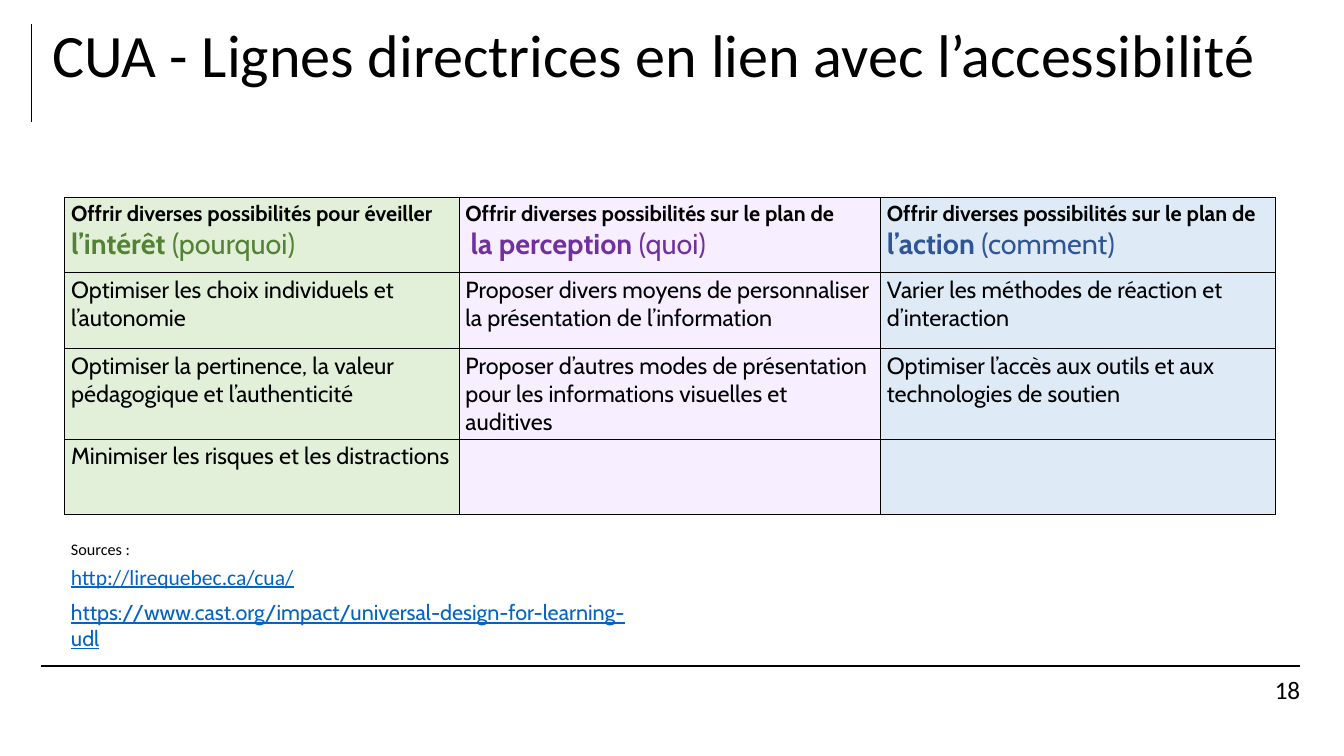
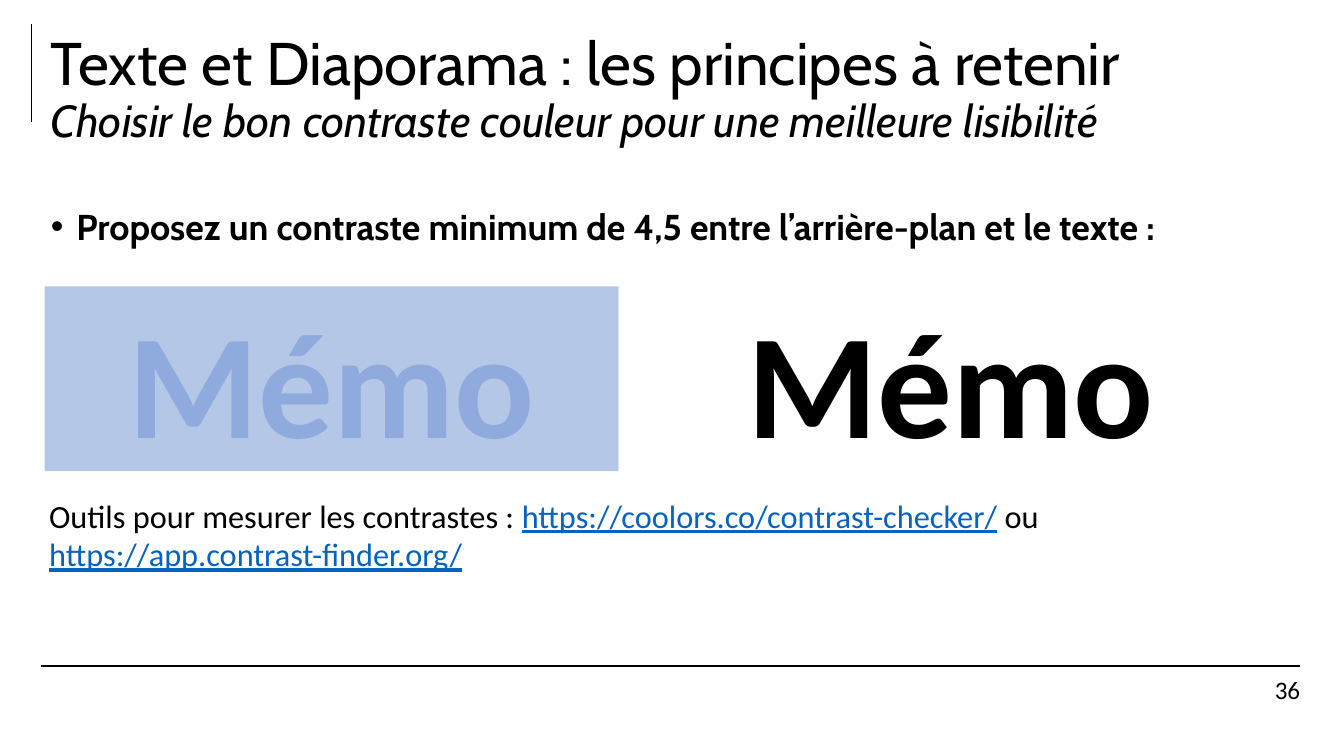
from dataclasses import dataclass

from lxml import etree
from pptx import Presentation
from pptx.dml.color import RGBColor
from pptx.enum.shapes import MSO_CONNECTOR, MSO_SHAPE
from pptx.enum.text import MSO_ANCHOR, PP_ALIGN
from pptx.oxml.ns import qn
from pptx.slide import Slide
from pptx.table import _Cell
from pptx.text.text import TextFrame, _Paragraph
from pptx.util import Cm, Pt

STRAIGHT = MSO_CONNECTOR.STRAIGHT
RECTANGLE = MSO_SHAPE.RECTANGLE
TOP, MIDDLE = MSO_ANCHOR.TOP, MSO_ANCHOR.MIDDLE
CENTER, RIGHT = PP_ALIGN.CENTER, PP_ALIGN.RIGHT

BLACK = RGBColor(0x00, 0x00, 0x00)
WHITE = RGBColor(0xFF, 0xFF, 0xFF)
LINK_BLUE = RGBColor(0x05, 0x63, 0xC1)
GREEN, PALE_GREEN = RGBColor(0x54, 0x82, 0x35), RGBColor(0xE2, 0xF0, 0xD9)
PURPLE, PALE_PURPLE = RGBColor(0x70, 0x30, 0xA0), RGBColor(0xF7, 0xEF, 0xFF)
BLUE, PALE_BLUE = RGBColor(0x2F, 0x55, 0x97), RGBColor(0xDE, 0xEB, 0xF7)
MEMO_BLUE, MEMO_BACK = RGBColor(0x8F, 0xAA, 0xDC), RGBColor(0xB4, 0xC7, 0xE7)

CABIN = "Cabin"
CALIBRI = "Calibri"
TITLE_SIZE = 67


@dataclass(frozen=True)
class Span:
    """A piece of text with one format."""
    text: str
    size: float
    font: str = CALIBRI
    color: RGBColor = BLACK
    bold: bool = False
    italic: bool = False
    underline: bool = False


@dataclass(frozen=True)
class Box:
    """A place on the slide, in centimetres."""
    left: float
    top: float
    width: float
    height: float

    def lengths(self) -> tuple[Cm, Cm, Cm, Cm]:
        return Cm(self.left), Cm(self.top), Cm(self.width), Cm(self.height)


@dataclass(frozen=True)
class Principle:
    """A table column: its heading and its guidelines."""
    width: float
    intro: str
    goal: str
    question: str
    color: RGBColor
    fill: RGBColor
    guidelines: tuple[str, ...]
    goal_indent: float = 0


@dataclass(frozen=True)
class Memo:
    """A sample of text colour on a background."""
    box: Box
    color: RGBColor
    fill: RGBColor


PRINCIPLES = (
    Principle(15.49, "Offrir diverses possibilités pour éveiller", "l’intérêt ",
              "(pourquoi)", GREEN, PALE_GREEN,
              ("Optimiser les choix individuels et l’autonomie",
               "Optimiser la pertinence, la valeur pédagogique et l’authenticité",
               "Minimiser les risques et les distractions")),
    Principle(16.56, "Offrir diverses possibilités sur le plan de", "la perception ",
              "(quoi)", PURPLE, PALE_PURPLE,
              ("Proposer divers moyens de personnaliser la présentation de l’information",
               "Proposer d’autres modes de présentation pour les informations "
               "visuelles et auditives"),
              goal_indent=0.2),
    Principle(15.52, "Offrir diverses possibilités sur le plan de", "l’action ",
              "(comment)", BLUE, PALE_BLUE,
              ("Varier les méthodes de réaction et d’interaction",
               "Optimiser l’accès aux outils et aux technologies de soutien")),
)
TABLE_LEFT, TABLE_TOP, ROW_HEIGHT = 2.54, 7.75, 2.97

SOURCES = (
    (Box(TABLE_LEFT, 21.08, 5.1, 1.02), Span("Sources\u00a0:", 18)),
    (Box(TABLE_LEFT, 22.02, 11.81, 1.27),
     Span("http://lirequebec.ca/cua/", 24, color=LINK_BLUE, underline=True)),
    (Box(TABLE_LEFT, 23.42, 22.78, 1.27),
     Span("https://www.cast.org/impact/universal-design-for-learning-udl", 24,
          CABIN, LINK_BLUE, underline=True)),
)

MEMOS = (
    Memo(Box(1.75, 11.25, 22.56, 7.26), MEMO_BLUE, MEMO_BACK),
    Memo(Box(24.31, 11.25, 26.09, 7.26), BLACK, WHITE),
)


def write_spans(paragraph: _Paragraph, *spans: Span) -> None:
    for span in spans:
        run = paragraph.add_run()
        run.text = span.text
        font = run.font
        font.name, font.size = span.font, Pt(span.size)
        font.color.rgb = span.color
        font.bold, font.italic = span.bold, span.italic
        font.underline = span.underline


def add_text(slide: Slide, box: Box, *spans: Span) -> TextFrame:
    frame = slide.shapes.add_textbox(*box.lengths()).text_frame
    frame.word_wrap = True
    write_spans(frame.paragraphs[0], *spans)
    return frame


def add_rule(slide: Slide, x1: float, y1: float, x2: float, y2: float) -> None:
    rule = slide.shapes.add_connector(STRAIGHT, Cm(x1), Cm(y1), Cm(x2), Cm(y2))
    rule.line.color.rgb = BLACK
    rule.line.width = Pt(2)
    etree.SubElement(rule._element.spPr, qn("a:effectLst"))


def add_framed_slide(prs: Presentation, number: int, title_box: Box,
                     *title_lines: Span) -> Slide:
    """Adds a slide with the rules, title and page number that all slides share."""
    slide = prs.slides.add_slide(prs.slide_layouts[6])
    add_rule(slide, 1.63, 26.16, 51.08, 26.16)
    add_rule(slide, 1.24, 4.8, 1.24, 0.94)

    page = add_text(slide, Box(45.26, 26.49, 5.82, 1.19), Span(str(number), 28))
    page.margin_left = page.margin_right = page.margin_top = page.margin_bottom = 0
    page.vertical_anchor = MIDDLE
    page.paragraphs[0].alignment = RIGHT

    title = add_text(slide, title_box, title_lines[0])
    title.vertical_anchor = MIDDLE
    for line in title_lines[1:]:
        write_spans(title.add_paragraph(), line)
    for paragraph in title.paragraphs:
        paragraph.line_spacing = 0.9
    return slide


def style_cell(cell: _Cell, fill: RGBColor) -> None:
    """Gives a cell its black borders and its fill."""
    properties = cell._tc.get_or_add_tcPr()
    for side in ("a:lnL", "a:lnR", "a:lnT", "a:lnB"):
        border = etree.SubElement(properties, qn(side), w=str(Pt(1)))
        solid = etree.SubElement(border, qn("a:solidFill"))
        etree.SubElement(solid, qn("a:srgbClr"), val=str(BLACK))
    cell.fill.solid()
    cell.fill.fore_color.rgb = fill


def write_heading(cell: _Cell, principle: Principle) -> None:
    frame = cell.text_frame
    write_spans(frame.paragraphs[0], Span(principle.intro, 24, CABIN, bold=True))
    goal = frame.add_paragraph()
    goal._p.get_or_add_pPr().set("marL", str(Cm(principle.goal_indent)))
    write_spans(goal,
                Span(principle.goal, 32, CABIN, principle.color, bold=True),
                Span(principle.question, 32, CABIN, principle.color))


def add_principles_table(slide: Slide) -> None:
    row_count = 1 + max(len(principle.guidelines) for principle in PRINCIPLES)
    box = Box(TABLE_LEFT, TABLE_TOP, sum(principle.width for principle in PRINCIPLES),
              row_count * ROW_HEIGHT)
    table = slide.shapes.add_table(row_count, len(PRINCIPLES), *box.lengths()).table
    for row in table.rows:
        row.height = Cm(ROW_HEIGHT)
    for col, principle in enumerate(PRINCIPLES):
        table.columns[col].width = Cm(principle.width)
        for row in range(row_count):
            style_cell(table.cell(row, col), principle.fill)
        write_heading(table.cell(0, col), principle)
        for row, guideline in enumerate(principle.guidelines, start=1):
            write_spans(table.cell(row, col).text_frame.paragraphs[0],
                        Span(guideline, 26, CABIN))


def add_memo(slide: Slide, memo: Memo) -> None:
    panel = slide.shapes.add_shape(RECTANGLE, *memo.box.lengths())
    panel.shadow.inherit = False
    panel.fill.solid()
    panel.fill.fore_color.rgb = memo.fill
    panel.line.fill.background()
    frame = panel.text_frame
    frame.word_wrap = True
    frame.vertical_anchor = TOP
    frame.paragraphs[0].alignment = CENTER
    write_spans(frame.paragraphs[0], Span("Mémo", 166, color=memo.color, bold=True))


def add_bullet(paragraph: _Paragraph) -> None:
    properties = paragraph._p.get_or_add_pPr()
    properties.set("marL", str(Cm(1)))
    properties.set("indent", str(-Cm(1)))
    etree.SubElement(properties, qn("a:buFont"), typeface="Arial")
    etree.SubElement(properties, qn("a:buChar"), char="•")


def build_guidelines_slide(prs: Presentation) -> None:
    slide = add_framed_slide(
        prs, 18, Box(1.8, 0.2, 49.63, 4.14),
        Span("CUA - Lignes directrices en lien avec l’accessibilité", TITLE_SIZE))
    add_principles_table(slide)
    for box, source in SOURCES:
        add_text(slide, box, source)


def build_contrast_slide(prs: Presentation) -> None:
    slide = add_framed_slide(
        prs, 36, Box(1.75, 0.66, 49.63, 5.79),
        Span("Texte et Diaporama : les principes à retenir", TITLE_SIZE, CABIN),
        Span("Choisir le bon contraste couleur pour une meilleure lisibilité", 50,
             CABIN, italic=True))

    advice = add_text(
        slide, Box(1.75, 7.06, 48.64, 4.06),
        Span("Proposez un contraste minimum de 4,5 entre l’arrière-plan et le texte :",
             40, CABIN, bold=True)).paragraphs[0]
    add_bullet(advice)
    advice.line_spacing = 1.5

    for memo in MEMOS:
        add_memo(slide, memo)

    add_text(
        slide, Box(1.68, 19.35, 48.74, 3.3),
        Span("Outils pour mesurer les contrastes : ", 36),
        Span("https://coolors.co/contrast-checker/", 36, color=LINK_BLUE, underline=True),
        Span(" ou ", 36),
        Span("https://app.contrast-finder.org/", 36, color=LINK_BLUE, underline=True))


def main() -> None:
    prs = Presentation()
    prs.slide_width, prs.slide_height = Cm(52.8), Cm(29.7)
    build_guidelines_slide(prs)
    build_contrast_slide(prs)
    prs.save("out.pptx")


if __name__ == "__main__":
    main()
